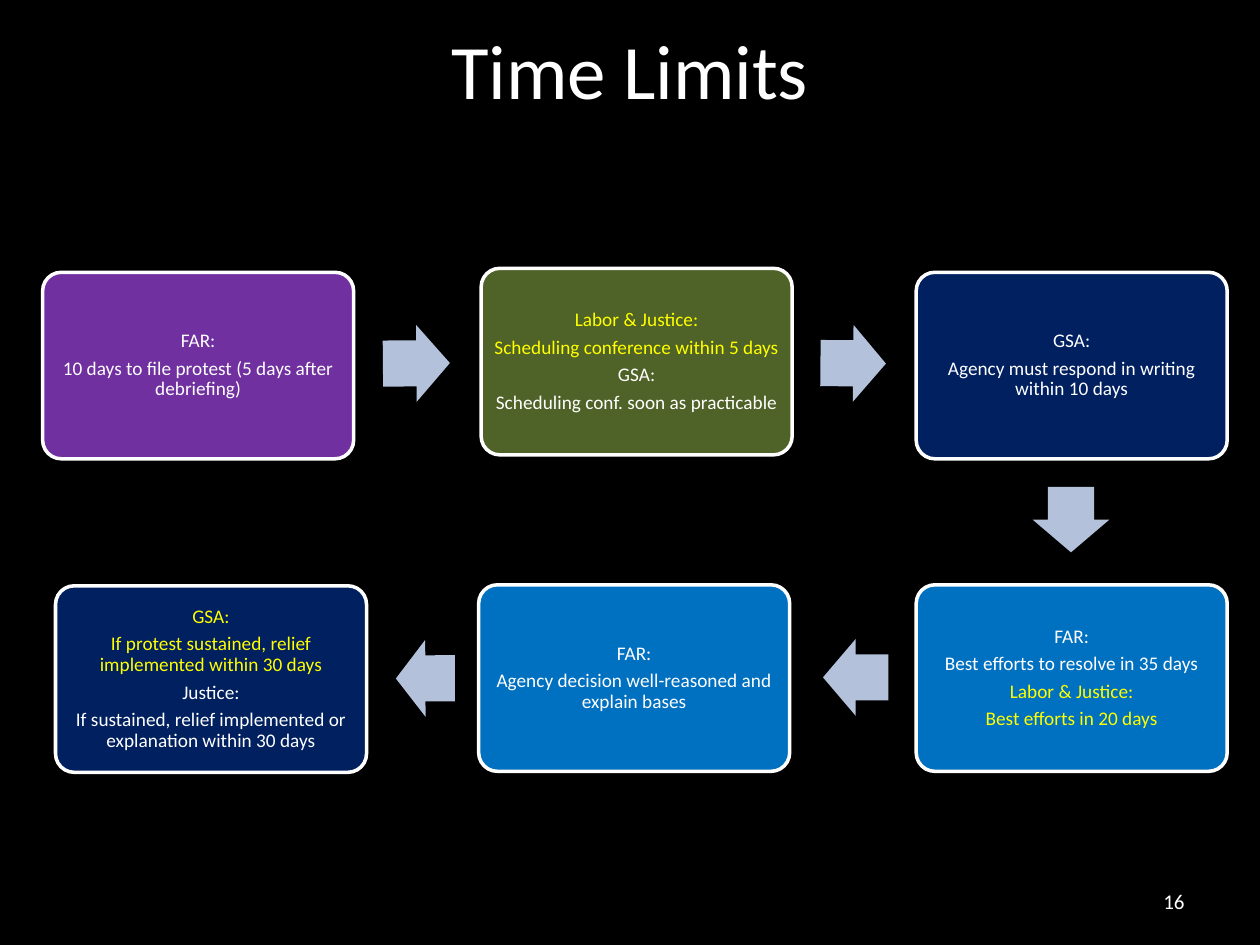
from dataclasses import dataclass
from typing import Any

from pptx import Presentation
from pptx.dml.color import RGBColor
from pptx.enum.shapes import MSO_SHAPE
from pptx.enum.text import MSO_ANCHOR, PP_ALIGN
from pptx.util import Cm, Pt

ROUND, ARROW = MSO_SHAPE.ROUNDED_RECTANGLE, MSO_SHAPE.RIGHT_ARROW
MIDDLE = MSO_ANCHOR.MIDDLE
CENTER, RIGHT = PP_ALIGN.CENTER, PP_ALIGN.RIGHT


@dataclass(frozen=True)
class Theme:
    font: str = "Calibri"
    black: str = "000000"
    white: str = "FFFFFF"
    yellow: str = "FFFF00"
    purple: str = "7030A0"
    green: str = "4F6228"
    navy: str = "002060"
    blue: str = "0070C0"
    arrow: str = "B3C1DB"
    title: int = 44
    body: int = 11
    number: int = 12


@dataclass(frozen=True)
class Line:
    text: str
    color: str


@dataclass(frozen=True)
class Step:
    left: float
    top: float
    fill: str
    lines: tuple[Line, ...]


@dataclass(frozen=True)
class Arrow:
    left: float
    top: float
    width: float
    turn: float


LOOK = Theme()
STEP_W, STEP_H, ARROW_H = 6.27, 3.76, 1.55
PAD = Cm(0.13)


def lines(color: str, *texts: str) -> tuple[Line, ...]:
    return tuple(Line(text, color) for text in texts)


# Steps of the protest, in order of time
STEPS = (
    Step(0.86, 5.49, LOOK.purple, lines(
        LOOK.white, "FAR:", "10 days to file protest (5 days after debriefing)")),
    Step(9.7, 5.41, LOOK.green,
         lines(LOOK.yellow, "Labor & Justice:", "Scheduling conference within 5 days")
         + lines(LOOK.white, "GSA:", "Scheduling conf. soon as practicable")),
    Step(18.47, 5.49, LOOK.navy, lines(
        LOOK.white, "GSA:", "Agency must respond in writing within 10 days")),
    Step(18.47, 11.79, LOOK.blue,
         lines(LOOK.white, "FAR:", "Best efforts to resolve in 35 days")
         + lines(LOOK.yellow, "Labor & Justice:", "Best efforts in 20 days")),
    Step(9.65, 11.79, LOOK.blue, lines(
        LOOK.white, "FAR:", "Agency decision well-reasoned and explain bases")),
    Step(1.12, 11.81, LOOK.navy,
         lines(LOOK.yellow, "GSA:",
               "If protest sustained, relief implemented within 30 days")
         + lines(LOOK.white, "Justice:",
                 "If sustained, relief implemented or explanation within 30 days")),
)

# Arrows between the steps
ARROWS = (
    Arrow(7.72, 6.55, 1.35, 359.5),
    Arrow(16.54, 6.55, 1.32, 0.5),
    Arrow(20.93, 9.7, 1.32, 90),
    Arrow(16.59, 12.88, 1.32, 180),
    Arrow(7.98, 12.9, 1.19, 179.7),
)


def put(target: Any, values: dict[str, Any]) -> None:
    for name, value in values.items():
        setattr(target, name, value)


def write(frame: Any, rows: tuple[Line, ...], size: int, layout: dict[str, Any]) -> None:
    put(frame, {"word_wrap": True, "vertical_anchor": MIDDLE})
    for index, row in enumerate(rows):
        para = frame.paragraphs[0] if index == 0 else frame.add_paragraph()
        put(para, layout)
        run = para.add_run()
        run.text = row.text
        put(run.font, {"name": LOOK.font, "size": Pt(size)})
        run.font.color.rgb = RGBColor.from_string(row.color)


def add_label(slide: Any, box: tuple[float, ...], text: str, size: int, align: Any) -> None:
    label = slide.shapes.add_textbox(*map(Cm, box))
    write(label.text_frame, lines(LOOK.white, text), size, {"alignment": align})


def add_form(slide: Any, kind: Any, box: tuple[float, ...], fill: str) -> Any:
    form = slide.shapes.add_shape(kind, *map(Cm, box))
    form.shadow.inherit = False
    form.fill.solid()
    form.fill.fore_color.rgb = RGBColor.from_string(fill)
    return form


def add_step(slide: Any, step: Step) -> None:
    form = add_form(slide, ROUND, (step.left, step.top, STEP_W, STEP_H), step.fill)
    form.adjustments[0] = 0.1
    form.line.color.rgb = RGBColor.from_string(LOOK.white)
    form.line.width = Pt(2)
    put(form.text_frame, {f"margin_{side}": PAD
                          for side in ("left", "top", "right", "bottom")})
    write(form.text_frame, step.lines, LOOK.body,
          {"alignment": CENTER, "line_spacing": 0.9, "space_after": Pt(3.85)})


def add_arrow(slide: Any, arrow: Arrow) -> None:
    form = add_form(slide, ARROW, (arrow.left, arrow.top, arrow.width, ARROW_H), LOOK.arrow)
    form.line.fill.background()
    form.adjustments[0], form.adjustments[1] = 0.6, 0.5
    form.rotation = arrow.turn


def main() -> None:
    deck = Presentation()
    put(deck, {"slide_width": Cm(25.4), "slide_height": Cm(19.05)})
    slide = deck.slides.add_slide(deck.slide_layouts[6])
    slide.background.fill.solid()
    slide.background.fill.fore_color.rgb = RGBColor.from_string(LOOK.black)

    # Title
    add_label(slide, (1.27, -0.2, 22.86, 3.18), "Time Limits", LOOK.title, CENTER)

    # Flow of steps
    for step in STEPS:
        add_step(slide, step)
    for arrow in ARROWS:
        add_arrow(slide, arrow)

    # Slide number
    add_label(slide, (18.21, 17.65, 5.92, 1.02), "16", LOOK.number, RIGHT)
    deck.save("out.pptx")


if __name__ == "__main__":
    main()
